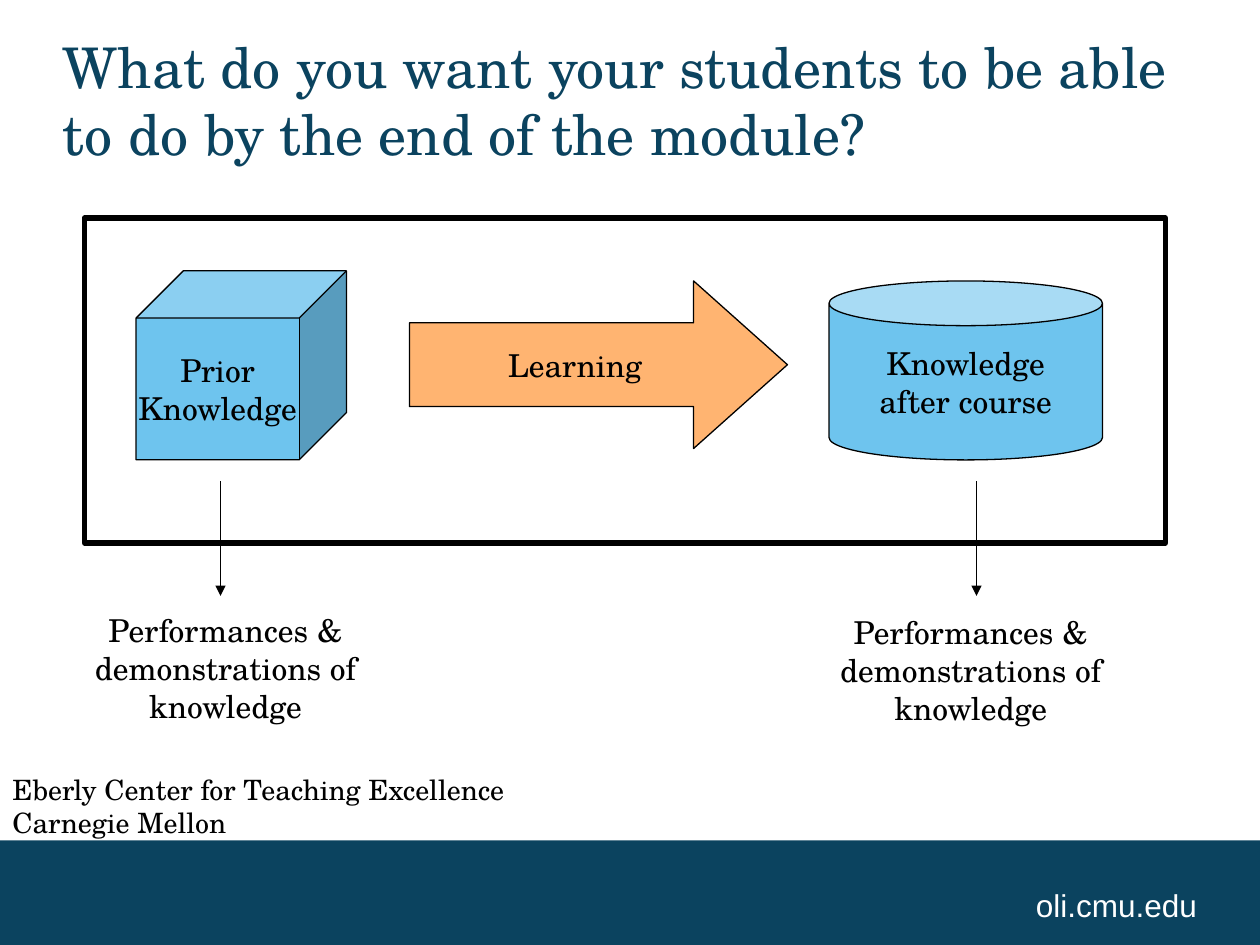
from typing import NamedTuple, Optional

from lxml import etree
from pptx import Presentation
from pptx.dml.color import RGBColor
from pptx.enum.shapes import MSO_CONNECTOR, MSO_SHAPE
from pptx.enum.text import MSO_ANCHOR, PP_ALIGN
from pptx.oxml.ns import qn
from pptx.util import Inches, Pt

NAVY = RGBColor(0x0B, 0x43, 0x5F)
BLUE = RGBColor(0x6E, 0xC4, 0xEE)
ORANGE = RGBColor(0xFF, 0xB4, 0x71)
BLACK = RGBColor(0, 0, 0)
WHITE = RGBColor(0xFF, 0xFF, 0xFF)
SERIF = "TeX Gyre Schola"
SANS = "Arial"
LEFT, CENTER, RIGHT = PP_ALIGN.LEFT, PP_ALIGN.CENTER, PP_ALIGN.RIGHT
TOP, MIDDLE, BOTTOM = MSO_ANCHOR.TOP, MSO_ANCHOR.MIDDLE, MSO_ANCHOR.BOTTOM
RECT, CUBE, CAN = MSO_SHAPE.RECTANGLE, MSO_SHAPE.CUBE, MSO_SHAPE.CAN
RIGHT_ARROW = MSO_SHAPE.RIGHT_ARROW
STRAIGHT = MSO_CONNECTOR.STRAIGHT


class Box(NamedTuple):
    left: float
    top: float
    width: float
    height: float


class Block(NamedTuple):
    kind: int
    box: Box
    fill: Optional[RGBColor] = None
    line: float = 0
    text: str = ""
    adjustments: tuple = ()


class Label(NamedTuple):
    box: Box
    text: str
    size: float = 18
    color: RGBColor = BLACK
    font: str = SERIF
    align: int = CENTER
    anchor: int = TOP
    inset: bool = True


BLOCKS = [
    Block(RECT, Box(0, 6.67, 10, 0.83), NAVY),
    Block(RIGHT_ARROW, Box(3.25, 2.23, 3, 1.33), ORANGE, 0.75, "Learning", (0.5, 0.56)),
    Block(CAN, Box(6.58, 2.23, 2.17, 1.42), BLUE, 0.75, "Knowledge\nafter course", (0.25,)),
    Block(CUBE, Box(1.08, 2.15, 1.67, 1.5), BLUE, 0.75, "Prior\nKnowledge", (0.25,)),
    Block(RECT, Box(0.67, 1.73, 8.58, 2.58), line=3),
]
EVIDENCE = "Performances & demonstrations of knowledge"
LABELS = [
    Label(Box(7.67, 6.83, 1.83, 0.5), "oli.cmu.edu", color=WHITE, font=SANS,
          align=RIGHT, anchor=BOTTOM, inset=False),
    Label(Box(0.5, 0.5, 9, 0.58),
          "What do you want your students to be able to do by the end of the module?",
          size=32, color=NAVY, align=LEFT, anchor=MIDDLE, inset=False),
    Label(Box(0.33, 4.8, 2.92, 1.3), EVIDENCE),
    Label(Box(6.32, 4.82, 2.77, 1.3), EVIDENCE),
    Label(Box(0, 6.08, 7.42, 0.4),
          "Eberly Center for Teaching Excellence\nCarnegie Mellon", size=16, align=LEFT),
]
ARROW_XS = (1.75, 7.75)
ARROW_TOP, ARROW_BOTTOM = 3.82, 4.73


def write_text(tf, text: str, *, size: float = 18, color: RGBColor = BLACK,
               font: str = SERIF, align: int = CENTER, anchor: int = MIDDLE,
               wrap: bool = False, inset: bool = True) -> None:
    tf.word_wrap = wrap
    tf.vertical_anchor = anchor
    if not inset:
        tf.margin_left = tf.margin_right = tf.margin_top = tf.margin_bottom = 0
    for i, line in enumerate(text.split("\n")):
        p = tf.paragraphs[0] if i == 0 else tf.add_paragraph()
        p.alignment = align
        r = p.add_run()
        r.text = line
        r.font.size = Pt(size)
        r.font.name = font
        r.font.color.rgb = color


def draw_block(s, block: Block) -> None:
    sp = s.shapes.add_shape(block.kind, *map(Inches, block.box))
    sp.shadow.inherit = False
    for i, value in enumerate(block.adjustments):
        sp.adjustments[i] = value
    if block.fill is None:
        sp.fill.background()
    else:
        sp.fill.solid()
        sp.fill.fore_color.rgb = block.fill
    if block.line:
        sp.line.color.rgb = BLACK
        sp.line.width = Pt(block.line)
    else:
        sp.line.fill.background()
    if block.text:
        write_text(sp.text_frame, block.text)


def draw_label(s, label: Label) -> None:
    tf = s.shapes.add_textbox(*map(Inches, label.box)).text_frame
    write_text(tf, label.text, size=label.size, color=label.color, font=label.font,
               align=label.align, anchor=label.anchor, wrap=True, inset=label.inset)


def draw_down_arrow(s, x: float) -> None:
    cxn = s.shapes.add_connector(STRAIGHT, Inches(x), Inches(ARROW_TOP),
                                 Inches(x), Inches(ARROW_BOTTOM))
    cxn.line.color.rgb = BLACK
    cxn.line.width = Pt(0.75)
    etree.SubElement(cxn.line._get_or_add_ln(), qn("a:tailEnd"), type="triangle")
    etree.SubElement(cxn._element.spPr, qn("a:effectLst"))


def main() -> None:
    prs = Presentation()
    prs.slide_width, prs.slide_height = Inches(10), Inches(7.5)
    s = prs.slides.add_slide(prs.slide_layouts[6])
    for block in BLOCKS:
        draw_block(s, block)
    for x in ARROW_XS:
        draw_down_arrow(s, x)
    for label in LABELS:
        draw_label(s, label)
    prs.save("out.pptx")


if __name__ == "__main__":
    main()
